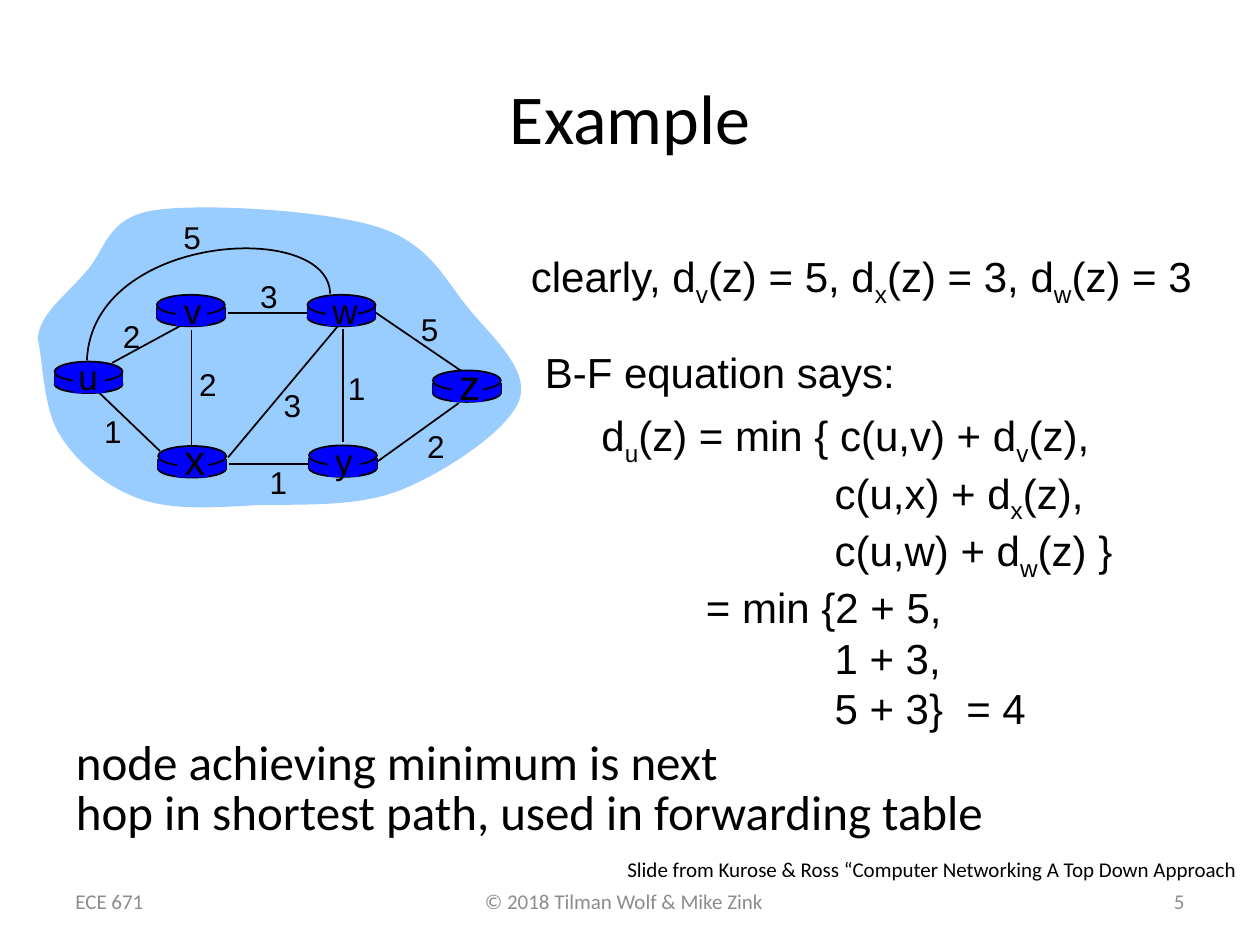
from lxml.etree import SubElement
from pptx import Presentation
from pptx.dml.color import RGBColor
from pptx.enum.shapes import MSO_CONNECTOR, MSO_SHAPE
from pptx.enum.text import MSO_ANCHOR, PP_ALIGN
from pptx.oxml.ns import qn
from pptx.util import Inches, Pt

COLORS = {name: RGBColor.from_string(value) for name, value in {
    "black": "000000", "gray": "8C8C8C", "router": "0000FF", "cloud": "99CCFF"}.items()}

presentation = Presentation()
presentation.slide_width, presentation.slide_height = Inches(10), Inches(7.5)
COLUMN = presentation.slide_width // 100
ROW = presentation.slide_height // 75
slide = presentation.slides.add_slide(presentation.slide_layouts[6])
shapes = slide.shapes


def add_text(box, lines, size, font="Arial", color="black", align=PP_ALIGN.LEFT,
             anchor=MSO_ANCHOR.TOP, wrap=False, spacing=None):
    """Add (indent in columns, text) lines; the letter after "_" is a subscript."""
    left, top, width, height = box
    shape = shapes.add_textbox(int(left * COLUMN), int(top * ROW),
                               int(width * COLUMN), int(height * ROW))
    frame = shape.text_frame
    frame.word_wrap, frame.vertical_anchor = wrap, anchor
    for index, (indent, text) in enumerate(lines):
        paragraph = frame.paragraphs[0] if index == 0 else frame.add_paragraph()
        paragraph.alignment = align
        paragraph.line_spacing = spacing
        paragraph.font.size, paragraph.font.name = Pt(size), font
        paragraph.font.color.rgb = COLORS[color]
        if indent:
            paragraph._p.get_or_add_pPr().set("marL", str(int(indent * COLUMN)))
        first, *rest = text.split("_")
        paragraph.add_run().text = first
        for piece in rest:
            subscript = paragraph.add_run()
            subscript.text = piece[0]
            subscript._r.get_or_add_rPr().set("baseline", "-25000")
            paragraph.add_run().text = piece[1:]


def add_line(x1, y1, x2, y2):
    line = shapes.add_connector(MSO_CONNECTOR.STRAIGHT, int(x1 * COLUMN), int(y1 * ROW),
                                int(x2 * COLUMN), int(y2 * ROW))
    line.line.color.rgb, line.line.width = COLORS["black"], Pt(1)
    SubElement(line._element.spPr, qn("a:effectLst"))


# Footer and title
add_text((37.5, 70, 24.4, 5), [(0, "© 2018 Tilman Wolf & Mike Zink")], 12, "Calibri", "gray")
add_text((5, 3, 90, 12.5), [(0, "Example")], 40, "Calibri", align=PP_ALIGN.CENTER,
         anchor=MSO_ANCHOR.MIDDLE, wrap=True)
for left, text, align in [(5, "ECE 671", PP_ALIGN.LEFT), (71.7, "5", PP_ALIGN.RIGHT)]:
    add_text((left, 69.5, 23.3, 4), [(0, text)], 12, "Calibri", "gray", align,
             MSO_ANCHOR.MIDDLE, True)

# Cloud behind the network, and the curved link from w to u: Bezier control points
cloud = [(3, 26.9), (3.1, 24.9), (5.3, 23.4), (6.8, 21.6), (8.4, 19.9), (8.4, 17.3),
         (12.2, 16.7), (16.1, 16.1), (25.8, 16.7), (29.9, 18), (34.1, 19.3), (35.3, 22.2),
         (37.2, 24.5), (39.1, 26.8), (42.1, 29.4), (41.2, 31.8), (40.3, 34.2), (35.3, 37.5),
         (31.8, 38.9), (28.3, 40.3), (23.7, 40), (20.3, 40.1), (16.8, 40.3), (13.7, 40.5),
         (11.1, 39.6), (8.5, 38.7), (6.1, 36.7), (4.8, 34.6), (3.4, 32.5), (3.4, 28.5),
         (3, 26.9)]
curved_link = [(26.2, 23.3), (26.1, 17.4), (7.3, 18.5), (6.9, 28.6)]
for controls, closed in [(cloud, True), (curved_link, False)]:
    start, *points = [(int(x * COLUMN), int(y * ROW)) for x, y in controls]
    builder = shapes.build_freeform(*start)
    builder.add_line_segments(points, close=closed)
    curve = builder.convert_to_shape()
    segments = list(curve._element.iter(qn("a:lnTo")))
    for index in range(0, len(points), 3):
        bezier = segments[index]
        bezier.tag = qn("a:cubicBezTo")
        for segment in segments[index + 1:index + 3]:
            bezier.append(segment[0])
            segment.getparent().remove(segment)
    curve.shadow.inherit = False
    if closed:
        curve.fill.solid()
        curve.fill.fore_color.rgb = COLORS["cloud"]
        curve.line.fill.background()
    else:
        curve.fill.background()
        curve.line.color.rgb, curve.line.width = COLORS["black"], Pt(1)

# Straight links
for link in [(8.9, 28.8, 14.8, 25.6), (27.2, 26.1, 27.2, 35.1), (15.2, 26.2, 15.2, 35.5),
             (18.1, 36.3, 26.8, 25.9), (30, 36.6, 36.4, 32), (24.5, 36.85, 18.2, 36.85),
             (12.7, 35.8, 7.9, 31.2), (24.4, 24.87, 18.1, 24.87), (36.7, 29.5, 29.8, 24.8)]:
    add_line(*link)

# Routers: left, top, middle of the name, size of the name
ROUTER_WIDTH = 5.4
routers = {"u": (4.33, 28.7, 7, 20), "y": (24.52, 35.35, 27.3, 20),
           "x": (12.55, 35.4, 15.45, 24), "w": (24.4, 23.4, 27.2, 20),
           "v": (12.45, 23.4, 15.3, 20), "z": (34.35, 29.4, 37.25, 24)}
# Kind, offset from the router's left and top, width, height, outlined
router_parts = [(MSO_SHAPE.OVAL, 0, 1.1, ROUTER_WIDTH, 1.4, True),
                (MSO_SHAPE.RECTANGLE, 0, 1, ROUTER_WIDTH, 0.9, False),
                (MSO_SHAPE.OVAL, 0, 0, ROUTER_WIDTH, 1.6, True),
                (MSO_SHAPE.RECTANGLE, 1.5, 0.2, 2.5, 2.3, False)]
for name, (left, top, middle, size) in routers.items():
    for kind, across, down, width, height, outlined in router_parts:
        if width == ROUTER_WIDTH and not outlined:
            for side in (left, left + ROUTER_WIDTH):
                add_line(side, top + down, side, top + down + height)
        part = shapes.add_shape(kind, int((left + across) * COLUMN), int((top + down) * ROW),
                                int(width * COLUMN), int(height * ROW))
        part.shadow.inherit = False
        part.fill.solid()
        part.fill.fore_color.rgb = COLORS["router"]
        if outlined:
            part.line.color.rgb, part.line.width = COLORS["black"], Pt(1)
        else:
            part.line.fill.background()
    rise, height = (0.95, 4.3) if size == 20 else (1.45, 5)
    add_text((middle - 1.8, top - rise, 3.6, height), [(0, name)], size,
             align=PP_ALIGN.CENTER)

# Link costs
for left, top, cost in [(8.75, 24.7, 2), (14.8, 28.5, 2), (7.25, 32.2, 1), (21.5, 30.15, 3),
                        (20.4, 36.25, 1), (26.6, 28.8, 1), (32.9, 33.4, 2), (32.4, 24.1, 5),
                        (19.65, 21.5, 3), (13.55, 16.8, 5)]:
    add_text((left, top, 3.4, 4), [(0, str(cost))], 18, align=PP_ALIGN.CENTER)

# Equations and conclusion
TERM, EQUALS = 18.5, 8.3
add_text((41.15, 19.4, 55.2, 5), [(0, "clearly, d_v(z) = 5, d_x(z) = 3, d_w(z) = 3")], 24)
add_text((46.75, 32.04, 42.7, 25), [
    (0, "d_u(z) = min { c(u,v) + d_v(z),"),
    (TERM, "c(u,x) + d_x(z),"),
    (TERM, "c(u,w) + d_w(z) }"),
    (EQUALS, "= min {2 + 5,"),
    (TERM, "1 + 3,"),
    (TERM, "5 + 3}  = 4")], 24)
add_text((5.05, 58.3, 74, 9), [
    (0, "node achieving minimum is next"),
    (0, "hop in shortest path, used in forwarding table")], 28, "Calibri", spacing=0.85)
add_text((42.25, 27, 29.8, 5), [(0, "B-F equation says:")], 24)
add_text((48.8, 67.5, 51.2, 3), [
    (0, "Slide from Kurose & Ross “Computer Networking A Top Down Approach")], 12, "Calibri")

presentation.save("out.pptx")
